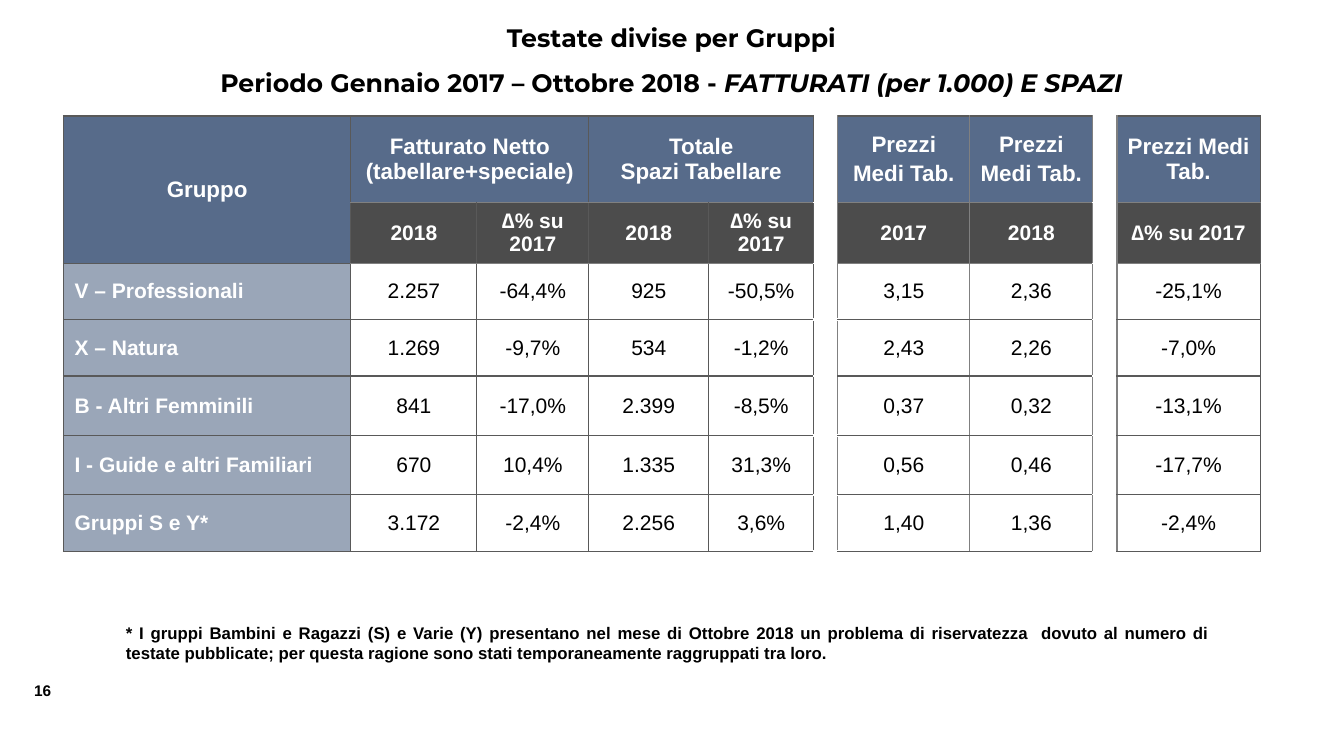
from lxml.etree import SubElement
from pptx import Presentation
from pptx.dml.color import RGBColor
from pptx.enum.text import MSO_ANCHOR, PP_ALIGN
from pptx.oxml.ns import qn
from pptx.util import Pt

SCALE = 9144  # EMU per px, 100 px to the inch
COLORS = {
    "text": "000000",
    "white": "FFFFFF",
    "blue": "576B8A",
    "rule": "595959",
    "soft_rule": "808080",
}

COLUMNS = [285, 125, 111, 119, 104, 24, 131, 122, 24, 142]
ROWS = [86, 60, 56, 56, 59, 59, 56]
GAPS = (5, 8)
MERGES = [((0, 0), (1, 0)), ((0, 1), (0, 2)), ((0, 3), (0, 4))]
GROUP_HEADINGS = {
    0: ["Gruppo"],
    1: ["Fatturato Netto (tabellare+speciale)"],
    3: ["Totale", "Spazi Tabellare"],
    6: ["Prezzi", "Medi Tab."],
    7: ["Prezzi", "Medi Tab."],
    9: ["Prezzi Medi Tab."],
}
YEAR_HEADINGS = ["", "2018", "∆% su 2017", "2018", "∆% su 2017", "", "2017", "2018", "", "∆% su 2017"]
GROUPS = [
    ["V – Professionali", "2.257", "-64,4%", "925", "-50,5%", "", "3,15", "2,36", "", "-25,1%"],
    ["X – Natura", "1.269", "-9,7%", "534", "-1,2%", "", "2,43", "2,26", "", "-7,0%"],
    ["B - Altri Femminili", "841", "-17,0%", "2.399", "-8,5%", "", "0,37", "0,32", "", "-13,1%"],
    ["I - Guide e altri Familiari", "670", "10,4%", "1.335", "31,3%", "", "0,56", "0,46", "", "-17,7%"],
    ["Gruppi S e Y*", "3.172", "-2,4%", "2.256", "3,6%", "", "1,40", "1,36", "", "-2,4%"],
]


def px(length):
    return round(length * SCALE)


def vertical_edge(edge):
    """Colour and width of the rule left of column number edge."""
    return ("soft_rule" if 6 <= edge <= 9 else "rule"), 1


def horizontal_edge(edge, column):
    """Colour and width of the rule above row number edge."""
    if column in GAPS:
        return "white", 2.25 if column == GAPS[0] and edge >= 3 else 1
    return ("soft_rule" if edge in (1, 2) and column > 0 else "rule"), 1


class Page:
    def __init__(self, deck):
        self.slide = deck.slides.add_slide(deck.slide_layouts[6])

    def add_span(self, para, text, size, color="text", bold=True, italic=False, font="Arial"):
        span = para.add_run()
        span.text = text
        span.font.name = font
        span.font.size = Pt(size)
        span.font.bold = bold
        span.font.italic = italic
        span.font.color.rgb = RGBColor.from_string(COLORS[color])

    def text_box(self, left, top, width, height, wrap=True):
        box = self.slide.shapes.add_textbox(px(left), px(top), px(width), px(height))
        box.text_frame.word_wrap = wrap
        return box.text_frame

    def title(self, lines):
        frame = self.text_box(111, 2, 1110, 107)
        for index, spans in enumerate(lines):
            para = frame.add_paragraph() if index else frame.paragraphs[0]
            para.alignment = PP_ALIGN.CENTER
            para.line_spacing = 1.5
            for text, italic in spans:
                self.add_span(para, text, 18, italic=italic, font="Montserrat")

    def note(self, text, size, place, align=PP_ALIGN.LEFT, wrap=True):
        para = self.text_box(*place, wrap=wrap).paragraphs[0]
        para.alignment = align
        self.add_span(para, text, size)

    def table(self, left, top):
        frame = self.slide.shapes.add_table(
            len(ROWS), len(COLUMNS), px(left), px(top), px(sum(COLUMNS)), px(sum(ROWS)))
        table = frame.table
        table.first_row = table.horz_banding = False
        for column, width in zip(table.columns, COLUMNS):
            column.width = px(width)
        for row, height in zip(table.rows, ROWS):
            row.height = px(height)
        for start, end in MERGES:
            table.cell(*start).merge(table.cell(*end))
        for row in range(len(ROWS)):
            for column in range(len(COLUMNS)):
                cell = table.cell(row, column)
                self.borders(cell, row, column)
                self.cell_fill(cell, row, column)
                self.cell_text(cell, row, column)

    def borders(self, cell, row, column):
        edges = {
            "a:lnL": vertical_edge(column),
            "a:lnR": vertical_edge(column + 1),
            "a:lnT": horizontal_edge(row, column),
            "a:lnB": horizontal_edge(row + 1, column),
        }
        properties = cell._tc.get_or_add_tcPr()
        for tag, (color, width) in edges.items():
            line = SubElement(properties, qn(tag), w=str(Pt(width)))
            fill = SubElement(line, qn("a:solidFill"))
            SubElement(fill, qn("a:srgbClr"), val=COLORS[color])

    def cell_fill(self, cell, row, column):
        if column in GAPS:
            color, opacity = "white", 100
        elif row == 0 or (row == 1 and column == 0):
            color, opacity = "blue", 100
        elif row == 1:
            color, opacity = "text", 70
        elif column == 0:
            color, opacity = "blue", 60
        else:
            cell.fill.background()
            return
        cell.fill.solid()
        cell.fill.fore_color.rgb = RGBColor.from_string(COLORS[color])
        if opacity < 100:
            shade = cell._tc.tcPr.find(qn("a:solidFill")).find(qn("a:srgbClr"))
            SubElement(shade, qn("a:alpha"), val=str(opacity * 1000))

    def cell_text(self, cell, row, column):
        heading = row < 2
        label = column == 0 and not heading
        if row == 0:
            lines = GROUP_HEADINGS.get(column, [])
        else:
            lines = [YEAR_HEADINGS[column] if heading else GROUPS[row - 2][column]]
        cell.vertical_anchor = MSO_ANCHOR.MIDDLE
        side, edge = (10, 5) if heading else (0, 0)
        cell.margin_left = px(11 if label else side)
        cell.margin_right = px(side)
        cell.margin_top = cell.margin_bottom = px(edge)
        for index, text in enumerate(filter(None, lines)):
            para = cell.text_frame.add_paragraph() if index else cell.text_frame.paragraphs[0]
            para.alignment = PP_ALIGN.LEFT if label else PP_ALIGN.CENTER
            if index and column > GAPS[0]:
                para.space_before = Pt(3)
            strong = heading or label
            self.add_span(para, text, 16 if row == 0 else 15, "white" if strong else "text", strong)


def main():
    deck = Presentation()
    deck.slide_width, deck.slide_height = px(1333), px(750)
    page = Page(deck)
    page.note("16", 11, (24, 671, 42, 29), wrap=False)
    page.title([
        [("Testate divise per Gruppi", False)],
        [("Periodo Gennaio 2017 – Ottobre 2018 - ", False), ("FATTURATI (per 1.000) E SPAZI", True)],
    ])
    page.table(63, 115)
    page.note(
        "* I gruppi Bambini e Ragazzi (S) e Varie (Y) presentano nel mese di Ottobre 2018 "
        "un problema di riservatezza  dovuto al numero di testate pubblicate; per questa "
        "ragione sono stati temporaneamente raggruppati tra loro.",
        12, (115, 613, 1095, 50), PP_ALIGN.JUSTIFY)
    deck.save("out.pptx")


if __name__ == "__main__":
    main()
